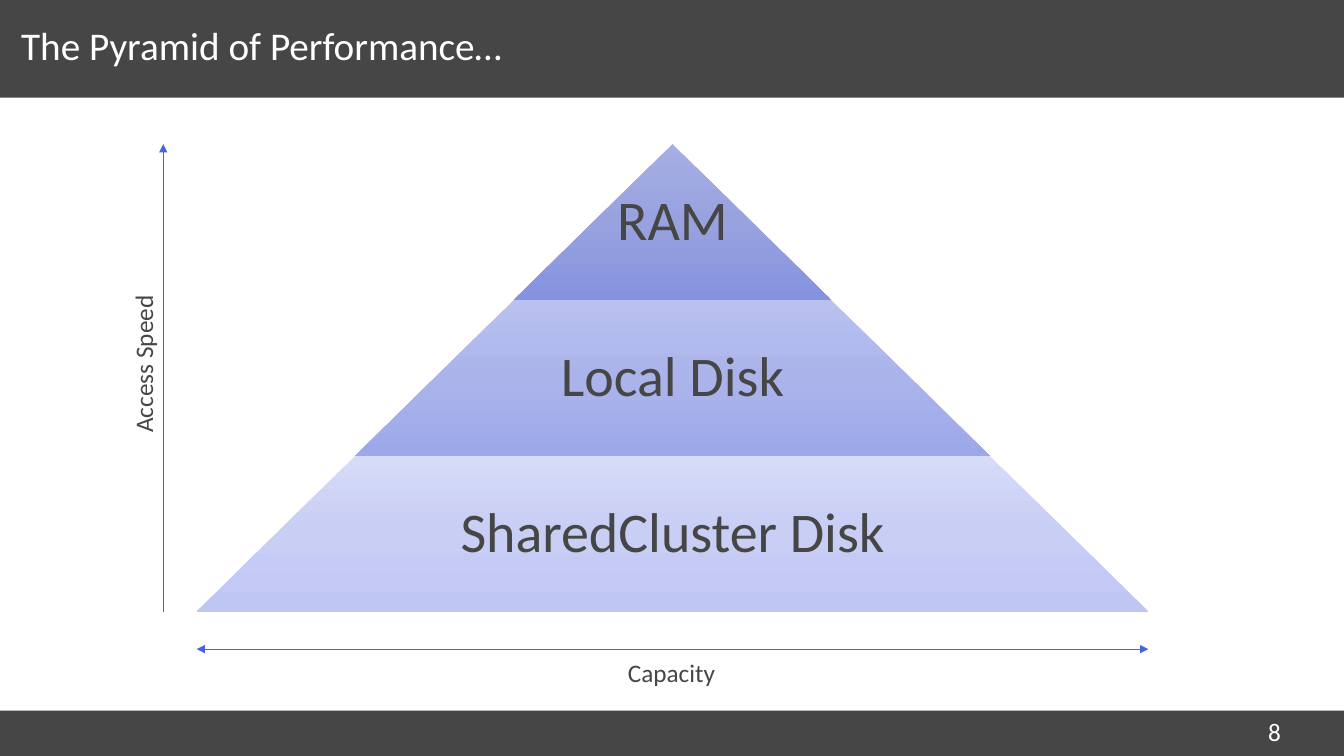
from copy import deepcopy
from dataclasses import dataclass

from lxml import etree
from pptx import Presentation
from pptx.dml.color import RGBColor
from pptx.enum.shapes import MSO_CONNECTOR, MSO_SHAPE
from pptx.enum.text import MSO_ANCHOR, PP_ALIGN
from pptx.oxml.ns import qn
from pptx.util import Inches, Pt

RECT, TRAPEZOID = MSO_SHAPE.RECTANGLE, MSO_SHAPE.TRAPEZOID
STRAIGHT = MSO_CONNECTOR.STRAIGHT
TOP, MIDDLE = MSO_ANCHOR.TOP, MSO_ANCHOR.MIDDLE
LEFT, CENTER = PP_ALIGN.LEFT, PP_ALIGN.CENTER

SLIDE_W, SLIDE_H = 13.33, 7.5
PYRAMID_TOP, TIER_H, TIER_STEP_W = 1.43, 1.547, 3.147
PYRAMID_MID = 6.67
PYRAMID_BOTTOM = PYRAMID_TOP + 3 * TIER_H


@dataclass(frozen=True)
class Theme:
    """Font, colours and type sizes of the slide."""
    font: str = "Calibri"
    dark: str = "464646"
    white: str = "FFFFFF"
    arrow: str = "4365E2"
    title: int = 28
    tier: int = 40
    label: int = 18


THEME = Theme()

TIERS = [
    ("RAM", ("A6AFE4", "98A2DF", "8592DF"), 1),
    ("Local Disk", ("B9C1EF", "ABB4EA", "9DA8EA"), 0.65),
    ("SharedCluster Disk", ("D6DBF7", "C8CEF4", "C0C6F4"), 0.65),
]


def rgb(value):
    """Turn a hex string into a colour."""
    return RGBColor.from_string(value)


def place(sp, box):
    """Set the left, top, width and height of a shape in inches."""
    sp.left, sp.top, sp.width, sp.height = map(Inches, box)


def write(sp, text, size, color, align=LEFT, spacing=1.0):
    """Put one formatted paragraph into a shape."""
    p = sp.text_frame.paragraphs[0]
    p.text = text
    p.alignment = align
    p.line_spacing = spacing
    p.font.name, p.font.size = THEME.font, Pt(size)
    p.font.color.rgb = rgb(color)


def set_frame(sp, anchor, inset_x, inset_y, wrap=True):
    """Set the anchor, insets and wrapping of a text frame."""
    tf = sp.text_frame
    tf.vertical_anchor, tf.word_wrap = anchor, wrap
    tf.margin_left = tf.margin_right = Inches(inset_x)
    tf.margin_top = tf.margin_bottom = Inches(inset_y)


def add_bar(slide, top, height):
    """Add a dark band across the slide."""
    sp = slide.shapes.add_shape(RECT, 0, Inches(top), Inches(SLIDE_W), Inches(height))
    sp.shadow.inherit = False
    sp.fill.solid()
    sp.fill.fore_color.rgb = rgb(THEME.dark)
    sp.line.fill.background()


def add_title(slide, text):
    """Fill the title placeholder and bring it above the bands."""
    sp = slide.shapes.title
    place(sp, (0.21, 0.17, 11.52, 0.64))
    set_frame(sp, MIDDLE, 0, 0.05)
    write(sp, text, THEME.title, THEME.white, spacing=0.8)
    sp.element.getparent().append(sp.element)


def add_label(slide, text, box, color=THEME.dark, rotation=0):
    """Add a small unwrapped label."""
    sp = slide.shapes.add_textbox(*map(Inches, box))
    set_frame(sp, TOP, 0.1, 0.05, wrap=False)
    write(sp, text, THEME.label, color)
    sp.rotation = rotation


def fill_gradient(sp, colors):
    """Fill a shape with three evenly spaced colours from top to bottom."""
    sp.fill.gradient()
    sp.fill.gradient_angle = 270
    stops = next(sp.element.iter(qn("a:gsLst")))
    stops.append(deepcopy(stops[-1]))
    for i, (stop, color) in enumerate(zip(sp.fill.gradient_stops, colors)):
        stop.position = i / 2
        stop.color.rgb = rgb(color)


def add_tier(slide, index, text, colors, text_share):
    """Add one pyramid tier and its centred caption."""
    width = TIER_STEP_W * (index + 1)
    top = PYRAMID_TOP + TIER_H * index
    box = (PYRAMID_MID - width / 2, top, width, TIER_H)
    sp = slide.shapes.add_shape(TRAPEZOID, *map(Inches, box))
    sp.adjustments[0] = TIER_STEP_W / 2 / TIER_H
    sp.shadow.inherit = False
    sp.line.fill.background()
    fill_gradient(sp, colors)

    text_w = width * text_share
    box = (PYRAMID_MID - text_w / 2, top, text_w, TIER_H)
    caption = slide.shapes.add_textbox(*map(Inches, box))
    set_frame(caption, MIDDLE, 0.06, 0.06)
    write(caption, text, THEME.tier, THEME.dark, CENTER, 0.9)


def add_arrow(slide, start, end, ends):
    """Add a thin line with triangles at the named ends."""
    line = slide.shapes.add_connector(STRAIGHT, *map(Inches, start + end))
    line.line.color.rgb = rgb(THEME.arrow)
    line.line.width = Pt(0.5)
    ln = line.line._get_or_add_ln()
    for end_tag in ends:
        etree.SubElement(ln, qn(end_tag)).set("type", "triangle")
    etree.SubElement(line.element.spPr, qn("a:effectLst"))


def main():
    """Build and save the slide."""
    prs = Presentation()
    prs.slide_width, prs.slide_height = Inches(SLIDE_W), Inches(SLIDE_H)
    slide = prs.slides.add_slide(prs.slide_layouts[5])

    add_bar(slide, 7.05, 0.45)
    add_bar(slide, 0, 0.97)
    add_title(slide, "The Pyramid of Performance…")
    for i, (text, colors, text_share) in enumerate(TIERS):
        add_tier(slide, i, text, colors, text_share)

    half = TIER_STEP_W * 1.5
    add_arrow(slide, (1.62, PYRAMID_BOTTOM), (1.62, PYRAMID_TOP), ["a:tailEnd"])
    add_label(slide, "Access Speed", (0.63, 3.4, 1.58, 0.4), rotation=270)
    add_arrow(slide, (PYRAMID_MID - half, 6.44), (PYRAMID_MID + half, 6.44),
              ["a:headEnd", "a:tailEnd"])
    add_label(slide, "Capacity", (6.13, 6.47, 1.07, 0.4))
    add_label(slide, "8", (12.48, 7.06, 0.3, 0.25), THEME.white)
    prs.save("out.pptx")


if __name__ == "__main__":
    main()
